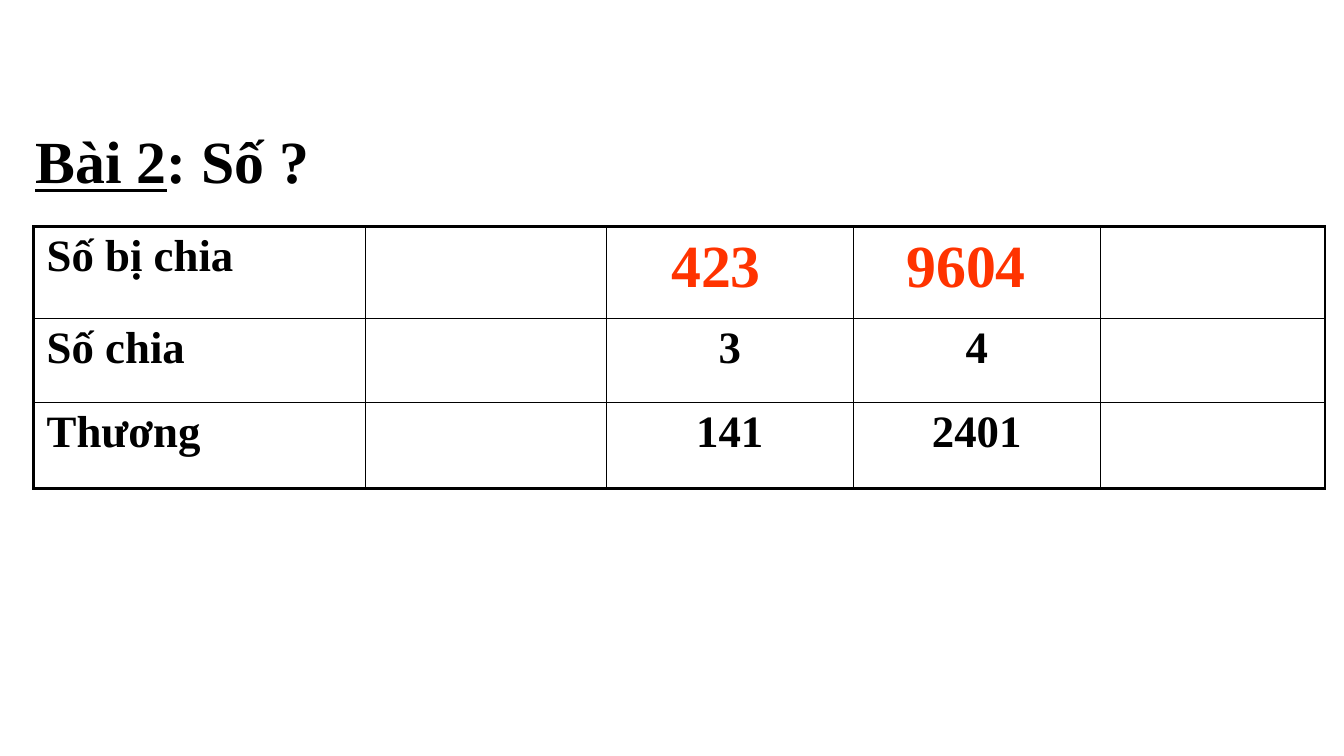
from lxml.etree import SubElement
from pptx import Presentation
from pptx.dml.color import RGBColor
from pptx.enum.text import MSO_ANCHOR, MSO_AUTO_SIZE, PP_ALIGN
from pptx.oxml.ns import qn
from pptx.util import Inches, Pt

BLACK = RGBColor(0x00, 0x00, 0x00)
WHITE = RGBColor(0xFF, 0xFF, 0xFF)
RED = RGBColor(0xFF, 0x33, 0x00)

ROWS = [
    ["Số bị chia", "", "", "", ""],
    ["Số chia", "", "3", "4", ""],
    ["Thương", "", "141", "2401", ""],
]
COLUMN_SHARES = [24.68, 17.93, 18.38, 18.38, 16.73]
ROW_SHARES = [12.13, 11.07, 11.47]


class DivisionSlide:
    """Places elements by percent of the slide's width and height."""

    font_name = "Times New Roman"
    large, medium = Pt(42.7), Pt(32)
    outer_line, inner_line = Pt(2.25), Pt(1)

    def __init__(self, deck):
        self.width, self.height = deck.slide_width, deck.slide_height
        self.page = deck.slides.add_slide(deck.slide_layouts[5])

    def across(self, share):
        return round(self.width * share / 100)

    def down(self, share):
        return round(self.height * share / 100)

    def area(self, left, top, width, height):
        return self.across(left), self.down(top), self.across(width), self.down(height)

    def style(self, para, size, color, before, align=PP_ALIGN.LEFT):
        para.alignment = align
        para.space_before = before
        font = para.font
        font.name, font.size, font.bold = self.font_name, size, True
        font.color.rgb = color

    def large_text(self, box, color):
        frame = box.text_frame
        frame.word_wrap = True
        frame.auto_size = MSO_AUTO_SIZE.NONE
        frame.vertical_anchor = MSO_ANCHOR.TOP
        frame.margin_left = frame.margin_right = Inches(0.1)
        frame.margin_top = frame.margin_bottom = Inches(0.07)
        self.style(frame.paragraphs[0], self.large, color, Pt(4))

    def title(self, label, rest, place):
        box = self.page.shapes.title
        box.left, box.top, box.width, box.height = self.area(*place)
        para = box.text_frame.paragraphs[0]
        span = para.add_run()
        span.text, span.font.underline = label, True
        para.add_run().text = rest
        self.large_text(box, BLACK)

    def answer(self, text, place):
        box = self.page.shapes.add_textbox(*self.area(*place))
        box.text_frame.text = text
        self.large_text(box, RED)

    def borders(self, cell, outer_sides):
        """Draw all four sides, with those in outer_sides thicker."""
        properties = cell._tc.get_or_add_tcPr()
        for side in "LRTB":
            width = self.outer_line if side in outer_sides else self.inner_line
            line = SubElement(properties, qn(f"a:ln{side}"), w=str(int(width)))
            fill = SubElement(line, qn("a:solidFill"))
            SubElement(fill, qn("a:srgbClr"), val=str(BLACK))

    def table(self, rows, column_shares, row_shares, left, top):
        place = self.area(left, top, sum(column_shares), sum(row_shares))
        last_row, last_column = len(row_shares) - 1, len(column_shares) - 1
        grid = self.page.shapes.add_table(last_row + 1, last_column + 1, *place).table
        grid.first_row = grid.horz_banding = False
        for column, share in zip(grid.columns, column_shares):
            column.width = self.across(share)
        for row, share in zip(grid.rows, row_shares):
            row.height = self.down(share)
        for r, texts in enumerate(rows):
            for c, text in enumerate(texts):
                cell = grid.cell(r, c)
                edges = {"L": c == 0, "R": c == last_column, "T": r == 0, "B": r == last_row}
                self.borders(cell, [side for side, outer in edges.items() if outer])
                cell.fill.solid()
                cell.fill.fore_color.rgb = WHITE
                cell.margin_left = cell.margin_right = Inches(0.13)
                cell.margin_top = cell.margin_bottom = Inches(0.05)
                cell.text = text
                align = PP_ALIGN.CENTER if c else PP_ALIGN.LEFT
                self.style(cell.text_frame.paragraphs[0], self.medium, BLACK, Pt(1.5), align)


def main():
    deck = Presentation()
    deck.slide_width, deck.slide_height = Inches(13.33), Inches(7.5)
    slide = DivisionSlide(deck)
    slide.title("Bài 2", ": Số ?", (1.88, 15.47, 26.7, 10.93))
    slide.table(ROWS, COLUMN_SHARES, ROW_SHARES, 2.5, 30)
    slide.answer("423", (49.2, 29.2, 10, 10.93))
    slide.answer("9604", (66.7, 29.2, 13.35, 10.93))
    deck.save("out.pptx")


if __name__ == "__main__":
    main()
